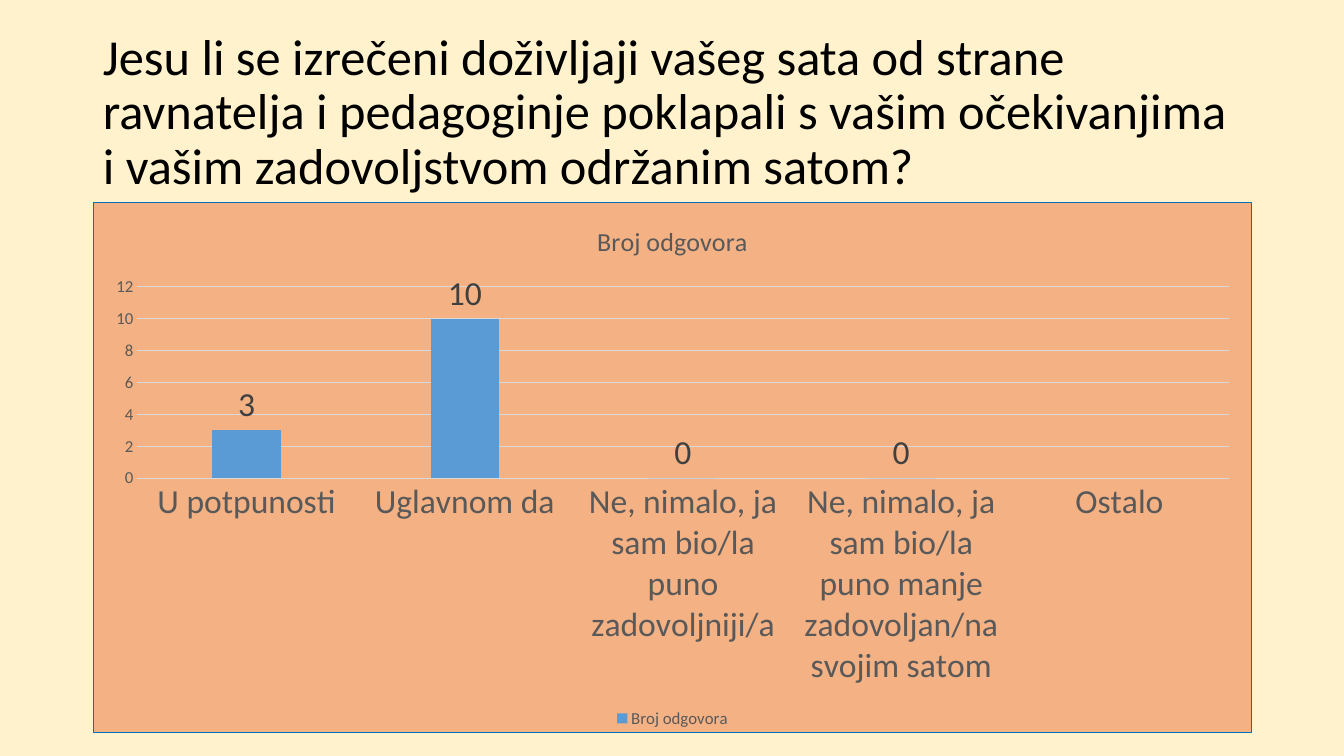
from dataclasses import dataclass

from pptx import Presentation
from pptx.chart.data import CategoryChartData
from pptx.dml.color import RGBColor
from pptx.enum.chart import (
    XL_CHART_TYPE as Kind,
    XL_LABEL_POSITION as Spot,
    XL_LEGEND_POSITION as Side,
    XL_TICK_MARK as Tick,
)
from pptx.enum.text import MSO_ANCHOR as Anchor, MSO_AUTO_SIZE as Fit, PP_ALIGN as Align
from pptx.oxml import parse_xml
from pptx.oxml.ns import nsdecls
from pptx.util import Inches, Pt


@dataclass(frozen=True)
class Theme:
    face: str = "Calibri"
    back: str = "FFF2CC"
    ink: str = "000000"
    grey: str = "595959"
    dark: str = "404040"
    grid: str = "D9D9D9"
    bar: str = "5B9BD5"
    panel: str = "F4B183"
    edge: str = "0070C0"
    head: float = 36
    title: float = 18.6
    big: float = 24
    small: float = 12
    base: float = 10
    line: float = 0.75


class Page:
    def __init__(self, deck, theme):
        self.theme = theme
        self.slide = deck.slides.add_slide(deck.slide_layouts[5])
        fill = self.slide.background.fill
        fill.solid()
        fill.fore_color.rgb = RGBColor.from_string(theme.back)

    def style(self, font, size, color):
        font.name = self.theme.face
        font.size = Pt(size)
        font.bold = False
        font.color.rgb = RGBColor.from_string(color)

    def rule(self, line):
        line.color.rgb = RGBColor.from_string(self.theme.grid)
        line.width = Pt(self.theme.line)

    def head(self, text, box):
        shape = self.slide.shapes.title
        shape.left, shape.top, shape.width, shape.height = map(Inches, box)
        frame = shape.text_frame
        frame.text = text
        frame.word_wrap = True
        frame.auto_size = Fit.NONE
        frame.vertical_anchor = Anchor.MIDDLE
        para = frame.paragraphs[0]
        para.alignment = Align.LEFT
        para.line_spacing = 0.9
        self.style(para.font, self.theme.head, self.theme.ink)

    def panel(self, chart):
        """Fill and outline the whole chart area."""
        look = self.theme
        area = parse_xml(
            f'<c:spPr {nsdecls("c", "a")}>'
            f'<a:solidFill><a:srgbClr val="{look.panel}"/></a:solidFill>'
            f'<a:ln w="{int(Pt(look.line))}"><a:solidFill>'
            f'<a:srgbClr val="{look.edge}"/></a:solidFill></a:ln></c:spPr>'
        )
        chart.element.chart.addnext(area)

    def chart(self, name, counts, box):
        look = self.theme
        data = CategoryChartData()
        data.categories = list(counts)
        data.add_series(name, list(counts.values()))
        frame = self.slide.shapes.add_chart(
            Kind.COLUMN_CLUSTERED, *map(Inches, box), data
        )
        chart = frame.chart
        self.style(chart.font, look.base, look.ink)
        self.panel(chart)

        chart.has_title = True
        text = chart.chart_title.text_frame
        text.text = name
        self.style(text.paragraphs[0].font, look.title, look.grey)

        chart.has_legend = True
        chart.legend.position = Side.BOTTOM
        chart.legend.include_in_layout = False
        self.style(chart.legend.font, look.small, look.grey)

        cats, vals = chart.category_axis, chart.value_axis
        for axis, size in ((cats, look.big), (vals, look.small)):
            axis.major_tick_mark = axis.minor_tick_mark = Tick.NONE
            self.style(axis.tick_labels.font, size, look.grey)
        self.rule(cats.format.line)
        vals.format.line.fill.background()
        vals.has_major_gridlines = True
        self.rule(vals.major_gridlines.format.line)

        plot = chart.plots[0]
        plot.vary_by_categories = False
        plot.gap_width, plot.overlap = 219, -27
        bars = plot.series[0]
        bars.format.fill.solid()
        bars.format.fill.fore_color.rgb = RGBColor.from_string(look.bar)
        labels = bars.data_labels
        labels.show_value = True
        labels.position = Spot.OUTSIDE_END
        self.style(labels.font, look.big, look.dark)


def main():
    deck = Presentation()
    deck.slide_width, deck.slide_height = Inches(13.33), Inches(7.5)
    page = Page(deck, Theme())
    page.head(
        "Jesu li se izrečeni doživljaji vašeg sata od strane ravnatelja i pedagoginje "
        "poklapali s vašim očekivanjima i vašim zadovoljstvom održanim satom?",
        (0.92, 0.4, 11.5, 1.45),
    )
    counts = {
        "U potpunosti": 3,
        "Uglavnom da": 10,
        "Ne, nimalo, ja sam bio/la puno zadovoljniji/a": 0,
        "Ne, nimalo, ja sam bio/la puno manje zadovoljan/na svojim satom": 0,
        "Ostalo": None,
    }
    page.chart("Broj odgovora", counts, (0.92, 2, 11.5, 5.27))
    deck.save("out.pptx")


if __name__ == "__main__":
    main()
